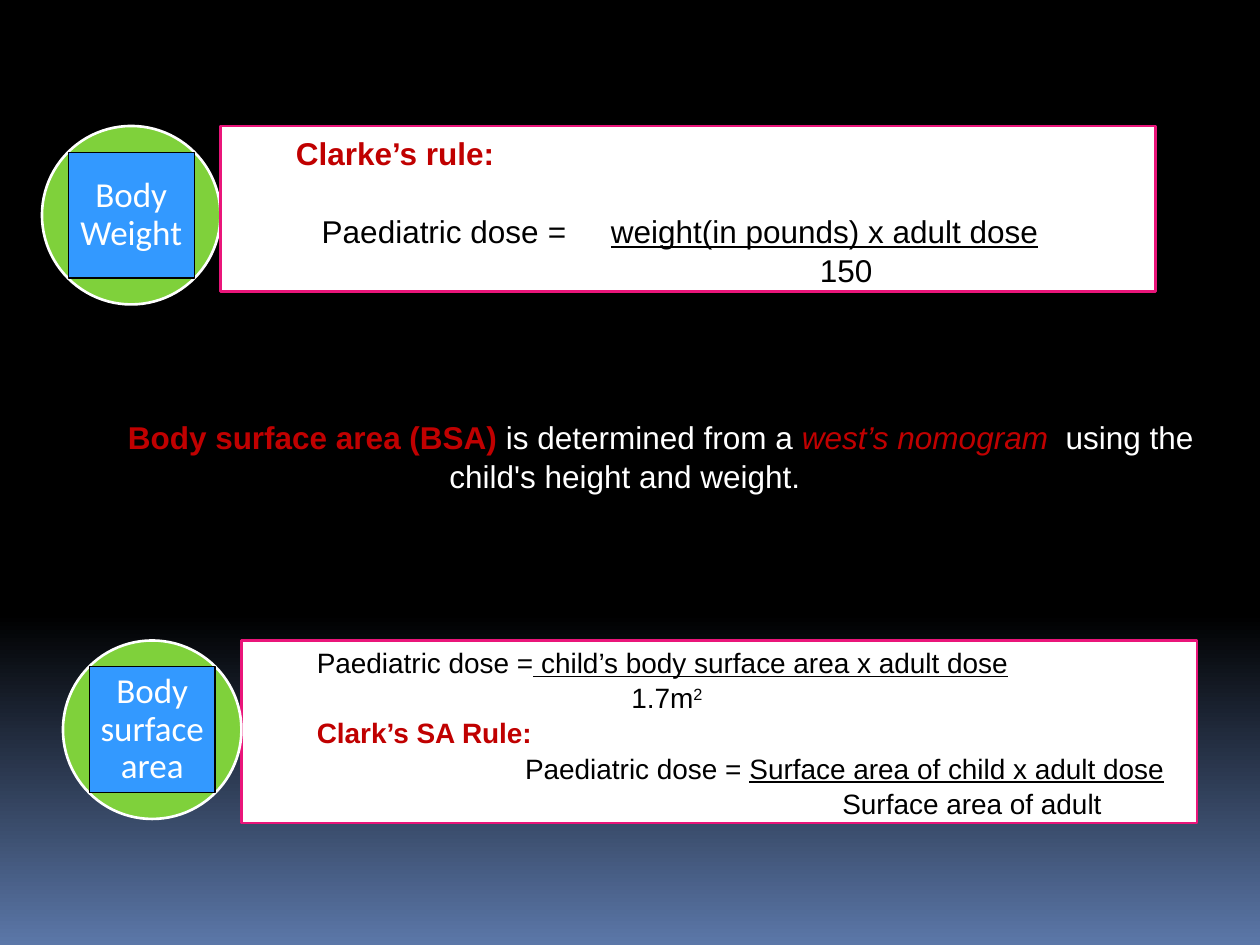
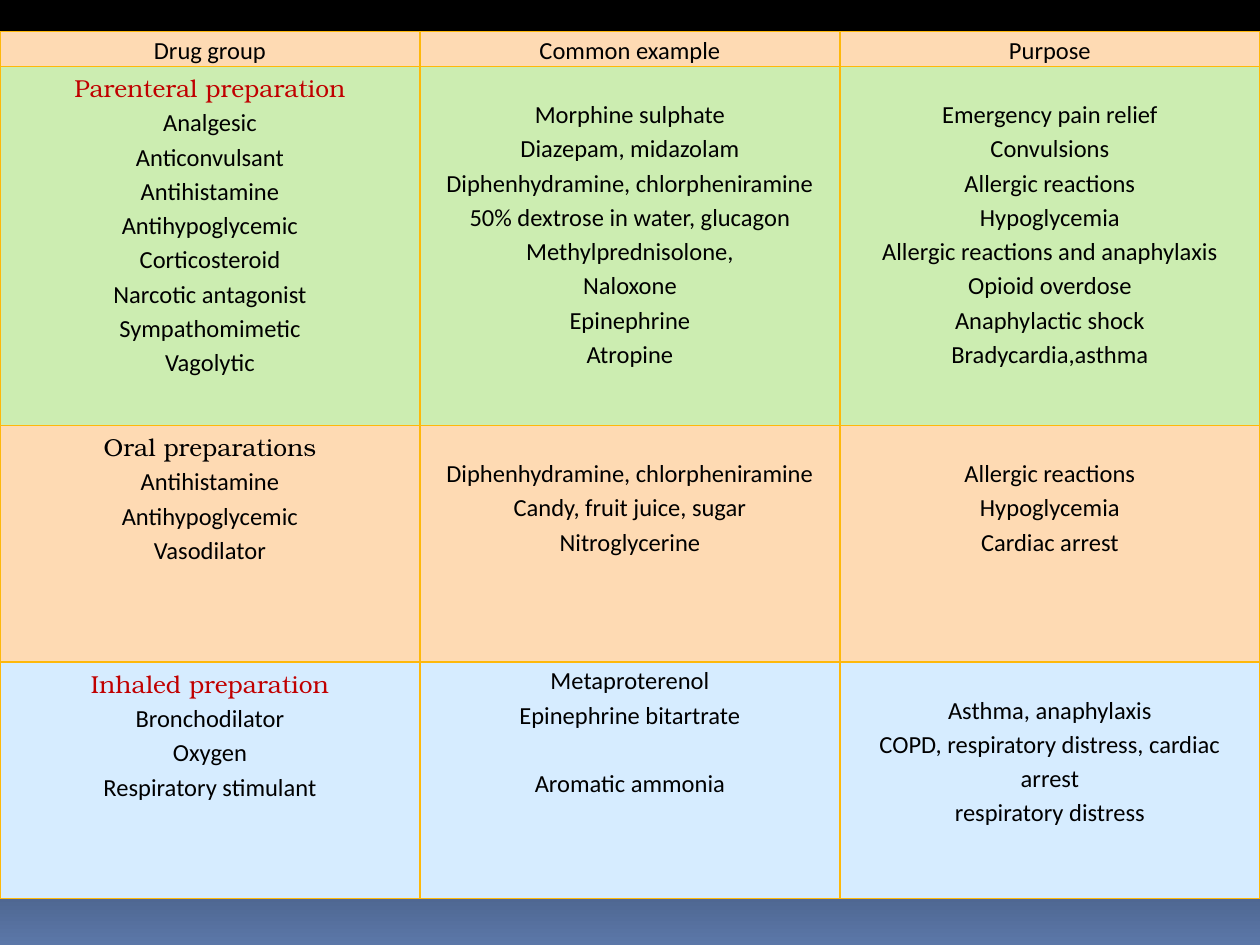
"""Build two slides on paediatric dosing rules and emergency drug groups."""
from copy import deepcopy
from dataclasses import dataclass

from pptx import Presentation
from pptx.dml.color import RGBColor
from pptx.enum.shapes import MSO_SHAPE
from pptx.enum.text import MSO_ANCHOR, PP_ALIGN
from pptx.oxml import parse_xml
from pptx.oxml.ns import nsdecls, qn
from pptx.util import Pt


@dataclass(frozen=True)
class Theme:
    """Colours, fonts and type sizes."""
    black: str = "000000"
    white: str = "FFFFFF"
    red: str = "C00000"
    pink: str = "EA157A"
    green: str = "7FD13B"
    blue: str = "3399FF"
    glow: str = "5B77A8"
    gold: str = "FEB80A"
    peach: str = "FEDAB3"
    mint: str = "CCEDB1"
    sky: str = "D6ECFF"
    rule_font: str = "Arial"
    label_font: str = "Calibri"
    group_font: str = "TeX Gyre Bonum"
    large: float = 18
    medium: float = 16
    badge: float = 20
    cell: float = 14


T = Theme()


@dataclass(frozen=True)
class Span:
    """A stretch of text with its own look."""
    text: str
    color: str = T.black
    bold: bool = False
    italic: bool = False
    underline: bool = False
    superscript: bool = False


@dataclass(frozen=True)
class Line:
    """A paragraph with its first-line indent, gap above and tab stops."""
    spans: tuple[Span, ...]
    indent: float
    before: float = 0
    tabs: tuple[float, ...] = ()


@dataclass(frozen=True)
class RuleBox:
    """A white panel that holds a dosing formula."""
    left: float
    top: float
    width: float
    height: float
    size: float
    anchor: MSO_ANCHOR
    lines: tuple[Line, ...]


@dataclass(frozen=True)
class Badge:
    """A green disc with a blue label in the middle."""
    left: float
    top: float
    label: str


@dataclass(frozen=True)
class Column:
    """The entries of one table cell, with the gap above the first."""
    entries: tuple[str, ...]
    top: float = 0
    gap_before: str = ""


@dataclass(frozen=True)
class DrugGroup:
    """A table row: its fill, heading colour and three cells."""
    fill: str
    heading: str
    height: float
    cells: tuple[Column, ...]


BADGES = (Badge(24, 72, "Body Weight"), Badge(36, 366, "Body surface area"))

CLARKE = RuleBox(126, 72, 534.5, 94.5, T.large, MSO_ANCHOR.TOP, (
    Line((Span("Clarke’s rule:", T.red, bold=True),), 36),
    Line((Span("Paediatric dose\t=\t"),
          Span("weight(in pounds) x adult dose", underline=True)),
         50.8, before=21.7, tabs=(185, 215.4)),
    Line((Span("150"),), 335.4),
))

SURFACE = RuleBox(138, 366, 546, 104.4, T.medium, MSO_ANCHOR.MIDDLE, (
    Line((Span("Paediatric dose ="),
          Span(" child’s body surface area x adult dose", underline=True)), 36),
    Line((Span("1.7m"), Span("2", superscript=True)), 215.7),
    Line((Span("Clark’s SA Rule:", T.red, bold=True),), 36),
    Line((Span("Paediatric dose = "),
          Span("Surface area of child x adult dose", underline=True)), 155),
    Line((Span("Surface area of adult"),), 336.3),
))

BSA = Line((
    Span("Body surface area (BSA) ", T.red, bold=True),
    Span("is determined from a ", T.white),
    Span("west’s nomogram  ", T.red, italic=True),
    Span("using the child's height and weight.", T.white),
), 41)

GAP = 16.7
HEADERS = ("Drug group", "Common example", "Purpose")
GROUPS = (
    DrugGroup(T.mint, T.red, 205.2, (
        Column(("Parenteral preparation", "Analgesic", "Anticonvulsant",
                "Antihistamine", "Antihypoglycemic", "Corticosteroid",
                "Narcotic antagonist", "Sympathomimetic", "Vagolytic")),
        Column(("Morphine sulphate", "Diazepam, midazolam",
                "Diphenhydramine, chlorpheniramine",
                "50% dextrose in water, glucagon", "Methylprednisolone,",
                "Naloxone", "Epinephrine", "Atropine"), GAP),
        Column(("Emergency pain relief", "Convulsions", "Allergic reactions",
                "Hypoglycemia", "Allergic reactions and anaphylaxis",
                "Opioid overdose", "Anaphylactic shock",
                "Bradycardia,asthma"), GAP))),
    DrugGroup(T.peach, T.black, 135.2, (
        Column(("Oral preparations", "Antihistamine", "Antihypoglycemic",
                "Vasodilator")),
        Column(("Diphenhydramine, chlorpheniramine",
                "Candy, fruit juice, sugar", "Nitroglycerine"), GAP),
        Column(("Allergic reactions", "Hypoglycemia", "Cardiac arrest"), GAP))),
    DrugGroup(T.sky, T.red, 135.2, (
        Column(("Inhaled preparation", "Bronchodilator", "Oxygen",
                "Respiratory stimulant")),
        Column(("Metaproterenol", "Epinephrine bitartrate",
                "Aromatic ammonia"), gap_before="Aromatic ammonia"),
        Column(("Asthma, anaphylaxis",
                "COPD, respiratory distress, cardiac arrest",
                "respiratory distress"), GAP))),
)


def rgb(color: str) -> RGBColor:
    """Turn a hex string into a colour."""
    return RGBColor.from_string(color)


def set_font(font, name: str, size: float, color: str) -> None:
    """Set the face, size and colour of a font."""
    font.name, font.size = name, Pt(size)
    font.color.rgb = rgb(color)


def set_background(master) -> None:
    """Fade the shared background from black to blue at the foot."""
    fill = master.background.fill
    fill.gradient()
    fill.gradient_angle = 270
    start, end = fill.gradient_stops
    start.color.rgb, start.position = rgb(T.black), 0
    end.color.rgb, end.position = rgb(T.glow), 1
    stops = master.element.find(".//" + qn("a:gsLst"))
    middle = deepcopy(stops[0])
    middle.set("pos", "65000")
    stops.insert(1, middle)


def add_panel(shapes, kind, box, fill: str, line: str, weight: float):
    """Add a filled, outlined shape without a shadow."""
    sp = shapes.add_shape(kind, *(Pt(v) for v in box))
    sp.shadow.inherit = False
    sp.fill.solid()
    sp.fill.fore_color.rgb = rgb(fill)
    sp.line.color.rgb = rgb(line)
    sp.line.width = Pt(weight)
    return sp


def write_line(p, line: Line, size: float, align: PP_ALIGN) -> None:
    """Write one indented paragraph of spans."""
    p.alignment, p.line_spacing = align, 1.05
    p.space_before = Pt(line.before)
    p.font.name, p.font.size = T.rule_font, Pt(size)
    pPr = p._p.get_or_add_pPr()
    pPr.set("marL", "0")
    pPr.set("indent", str(int(Pt(line.indent))))
    if line.tabs:
        stops = "".join(f'<a:tab pos="{int(Pt(t))}" algn="l"/>' for t in line.tabs)
        tabs = parse_xml(f'<a:tabLst {nsdecls("a")}>{stops}</a:tabLst>')
        pPr.find(qn("a:defRPr")).addprevious(tabs)
    for span in line.spans:
        r = p.add_run()
        r.text = span.text
        set_font(r.font, T.rule_font, size, span.color)
        r.font.bold, r.font.italic = span.bold, span.italic
        r.font.underline = span.underline
        if span.superscript:
            r._r.get_or_add_rPr().set("baseline", "30000")


def add_rule_box(s, box: RuleBox) -> None:
    """Draw a formula panel."""
    sp = add_panel(s.shapes, MSO_SHAPE.RECTANGLE,
                   (box.left, box.top, box.width, box.height), T.white, T.pink, 1.5)
    tf = sp.text_frame
    tf.word_wrap, tf.vertical_anchor = True, box.anchor
    for i, line in enumerate(box.lines):
        p = tf.add_paragraph() if i else tf.paragraphs[0]
        write_line(p, line, box.size, PP_ALIGN.LEFT)


def add_badge(s, badge: Badge) -> None:
    """Draw a disc and its label as a group."""
    disc, label, inset = 102, 72, 15
    shapes = s.shapes.add_group_shape().shapes
    add_panel(shapes, MSO_SHAPE.OVAL, (badge.left, badge.top, disc, disc),
              T.green, T.white, 1.5)
    sp = add_panel(shapes, MSO_SHAPE.RECTANGLE,
                   (badge.left + inset, badge.top + inset, label, label),
                   T.blue, T.black, 0.75)
    tf = sp.text_frame
    tf.word_wrap, tf.vertical_anchor = True, MSO_ANCHOR.MIDDLE
    tf.margin_left = tf.margin_right = Pt(5.76)
    tf.margin_top = tf.margin_bottom = Pt(2.16)
    p = tf.paragraphs[0]
    p.text, p.alignment, p.line_spacing = badge.label, PP_ALIGN.CENTER, 0.9
    set_font(p.font, T.label_font, T.badge, T.white)


def fill_cell(cell, column: Column, fill: str, heading: str = "") -> None:
    """Fill, border and write a cell; a heading colour marks its first entry."""
    cell.fill.solid()
    cell.fill.fore_color.rgb = rgb(fill)
    cell.margin_left = cell.margin_right = Pt(5)
    cell.margin_top, cell.margin_bottom = Pt(column.top), Pt(0)
    tcPr = cell._tc.get_or_add_tcPr()
    for i, side in enumerate(("lnL", "lnR", "lnT", "lnB")):
        tcPr.insert(i, parse_xml(
            f'<a:{side} {nsdecls("a")} w="{int(Pt(0.94))}"><a:solidFill>'
            f'<a:srgbClr val="{T.gold}"/></a:solidFill></a:{side}>'))
    tf = cell.text_frame
    for i, entry in enumerate(column.entries):
        p = tf.add_paragraph() if i else tf.paragraphs[0]
        p.text, p.alignment, p.line_spacing = entry, PP_ALIGN.CENTER, 1.15
        if entry == column.gap_before:
            p.space_before = Pt(19.6)
        is_heading = bool(heading) and i == 0
        set_font(p.font, T.group_font if is_heading else T.label_font, T.cell,
                 heading if is_heading else T.black)


def build_rules(s) -> None:
    """Build the slide of dosing rules."""
    add_rule_box(s, SURFACE)
    for badge in BADGES:
        add_badge(s, badge)
    add_rule_box(s, CLARKE)
    tf = s.shapes.add_textbox(Pt(24), Pt(234), Pt(666), Pt(72.7)).text_frame
    tf.word_wrap = True
    write_line(tf.paragraphs[0], BSA, T.large, PP_ALIGN.CENTER)


def build_drugs(s) -> None:
    """Build the slide with the drug table."""
    heights = (20, *(group.height for group in GROUPS))
    tbl = s.shapes.add_table(len(heights), len(HEADERS), Pt(0), Pt(18),
                             Pt(720), Pt(sum(heights))).table
    tbl.first_row = tbl.horz_banding = False
    for row, height in zip(tbl.rows, heights):
        row.height = Pt(height)
    for c, header in enumerate(HEADERS):
        fill_cell(tbl.cell(0, c), Column((header,)), T.peach)
        for r, group in enumerate(GROUPS, 1):
            fill_cell(tbl.cell(r, c), group.cells[c], group.fill,
                      "" if c else group.heading)


def main() -> None:
    """Build and save the presentation."""
    prs = Presentation()
    prs.slide_width, prs.slide_height = Pt(720), Pt(540)
    set_background(prs.slide_master)
    for build in (build_rules, build_drugs):
        build(prs.slides.add_slide(prs.slide_layouts[6]))
    prs.save("out.pptx")


if __name__ == "__main__":
    main()
